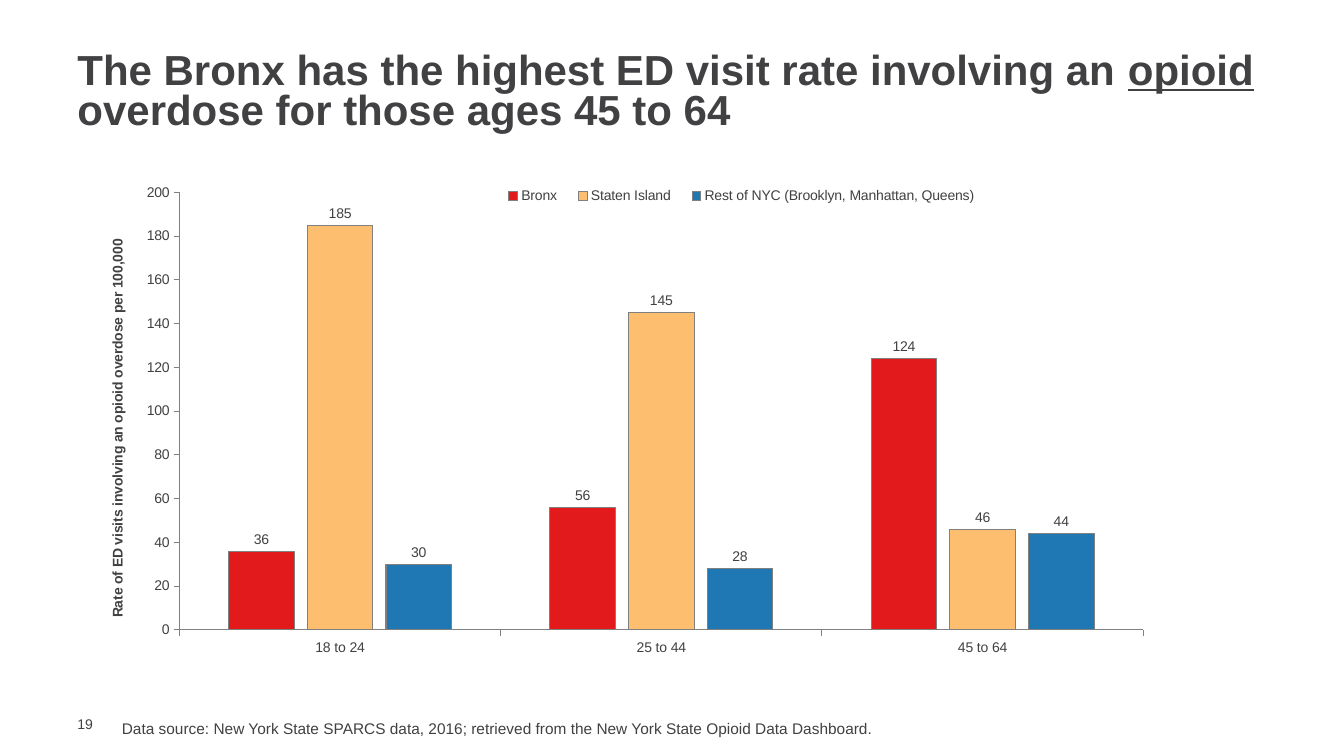
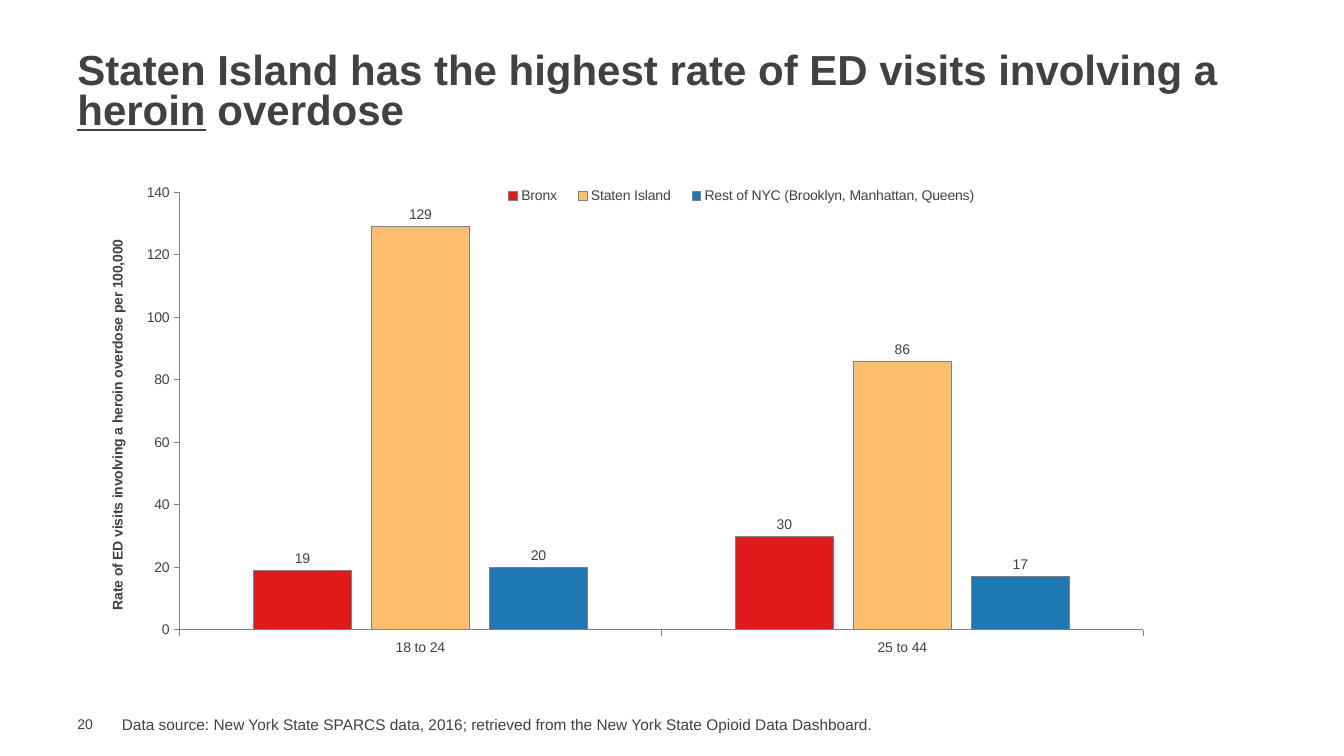
from dataclasses import dataclass

from lxml import etree
from pptx import Presentation
from pptx.chart.data import CategoryChartData
from pptx.dml.color import RGBColor
from pptx.enum.chart import XL_CHART_TYPE, XL_LABEL_POSITION, XL_LEGEND_POSITION, XL_TICK_MARK
from pptx.enum.text import MSO_ANCHOR
from pptx.oxml.ns import qn
from pptx.util import Inches, Pt

COLUMNS = XL_CHART_TYPE.COLUMN_CLUSTERED
OUTER = XL_LABEL_POSITION.OUTSIDE_END
LEGEND_TOP = XL_LEGEND_POSITION.TOP
TICK_OUT = XL_TICK_MARK.OUTSIDE
MIDDLE, TOP = MSO_ANCHOR.MIDDLE, MSO_ANCHOR.TOP

# Shared style
FONT = "Arial"
INK = RGBColor(0x41, 0x40, 0x42)
GRAY = RGBColor(0x80, 0x80, 0x80)
AREAS = {
    "Bronx": RGBColor(0xE3, 0x1A, 0x1C),
    "Staten Island": RGBColor(0xFD, 0xBF, 0x6F),
    "Rest of NYC (Brooklyn, Manhattan, Queens)": RGBColor(0x1F, 0x78, 0xB4),
}
CHART = (1, 1.83, 10.5, 4.88)
SOURCE = ("Data source: New York State SPARCS data, 2016; "
          "retrieved from the New York State Opioid Data Dashboard.")


@dataclass
class Page:
    number: int
    title: str  # words between asterisks are underlined
    drug: str
    ages: list[str]
    rates: list[list[int]]  # one row per area
    top: int
    foot: float


PAGES = [
    Page(19, "The Bronx has the highest ED visit rate involving an *opioid *"
         "overdose for those ages 45 to 64", "an opioid",
         ["18 to 24", "25 to 44", "45 to 64"],
         [[36, 56, 124], [185, 145, 46], [30, 28, 44]], 200, 7.08),
    Page(20, "Staten Island has the highest rate of ED visits involving a "
         "*heroin* overdose", "a heroin",
         ["18 to 24", "25 to 44"],
         [[19, 30], [129, 86], [20, 17]], 140, 7.05),
]


def style(font, size: float, bold: bool = False) -> None:
    font.name, font.size, font.bold = FONT, Pt(size), bold
    font.color.rgb = INK


def write(slide, text: str, box: tuple, *, size: float, bold: bool = False,
          anchor=TOP, insets: tuple = (0.1, 0.05, 0.1, 0.05),
          spacing: float = 1.0) -> None:
    frame = slide.shapes.add_textbox(*map(Inches, box)).text_frame
    frame.word_wrap = True
    frame.vertical_anchor = anchor
    (frame.margin_left, frame.margin_top,
     frame.margin_right, frame.margin_bottom) = map(Inches, insets)
    para = frame.paragraphs[0]
    para.line_spacing = spacing
    for index, part in enumerate(text.split("*")):
        run = para.add_run()
        run.text = part
        style(run.font, size, bold)
        run.font.underline = index % 2 == 1


def place(part, index: int, **spans: float) -> None:
    """Fix a chart part at x, y, w, h, in inches within the chart."""
    for old in part.findall(qn("c:layout")):
        part.remove(old)
    layout = etree.Element(qn("c:layout"))
    manual = etree.SubElement(layout, qn("c:manualLayout"))

    def add(tag: str, val) -> None:
        etree.SubElement(manual, qn("c:" + tag)).set("val", str(val))

    if part.tag == qn("c:plotArea"):
        add("layoutTarget", "inner")
    add("xMode", "edge")
    add("yMode", "edge")
    for key, span in spans.items():
        add(key, span / CHART[2 if key in "xw" else 3])
    part.insert(index, layout)


def plot(slide, page: Page) -> None:
    data = CategoryChartData(number_format="0")
    data.categories = page.ages
    for name, row in zip(AREAS, page.rates):
        data.add_series(name, row)
    chart = slide.shapes.add_chart(COLUMNS, *map(Inches, CHART), data).chart
    style(chart.font, 10)
    chart.has_title = False
    place(chart.plots[0]._element.getparent(), 0, x=0.78, y=0.08, w=9.56, h=4.34)

    # Bars and labels
    bars = chart.plots[0]
    bars.gap_width, bars.overlap = 150, -20
    bars.vary_by_categories = False
    for series, color in zip(bars.series, AREAS.values()):
        series.format.fill.solid()
        series.format.fill.fore_color.rgb = color
        series.format.line.color.rgb = GRAY
        series.format.line.width = Pt(0.75)
        labels = series.data_labels
        labels.show_value = True
        labels.position = OUTER
        labels.number_format, labels.number_format_is_linked = "0", False
        style(labels.font, 10)

    # Axes
    for axis in (chart.category_axis, chart.value_axis):
        axis.has_major_gridlines = False
        axis.major_tick_mark = TICK_OUT
        axis.format.line.color.rgb = GRAY
        axis.format.line.width = Pt(0.75)
        style(axis.tick_labels.font, 10)
    rate = chart.value_axis
    rate.minimum_scale, rate.maximum_scale, rate.major_unit = 0, page.top, 20
    title = rate.axis_title
    para = title.text_frame.paragraphs[0]
    run = para.add_run()
    run.text = f"Rate of ED visits involving {page.drug} overdose per 100,000"
    style(run.font, 10, bold=True)
    body = title._element.find(".//" + qn("a:bodyPr"))
    body.set("rot", "-5400000")
    body.set("vert", "horz")
    place(title._element, 1, x=0.05, y=0.52)

    # Legend
    chart.has_legend = True
    legend = chart.legend
    legend.position = LEGEND_TOP
    legend.include_in_layout = False
    style(legend.font, 10)
    place(legend._element, 1, x=3.88, y=0, w=4.95, h=0.23)


def main() -> None:
    deck = Presentation()
    deck.slide_width, deck.slide_height = Inches(13.33), Inches(7.5)
    for page in PAGES:
        slide = deck.slides.add_slide(deck.slide_layouts[6])
        write(slide, str(page.number), (0.67, 7.1, 0.43, 0.17), size=10,
              anchor=MIDDLE, insets=(0.1, 0, 0, 0))
        write(slide, page.title, (0.67, 0.47, 12, 0.91), size=30, bold=True,
              anchor=MIDDLE, spacing=0.8)
        plot(slide, page)
        write(slide, SOURCE, (1.11, page.foot, 9.71, 0.29), size=11)
    deck.save("out.pptx")


if __name__ == "__main__":
    main()
